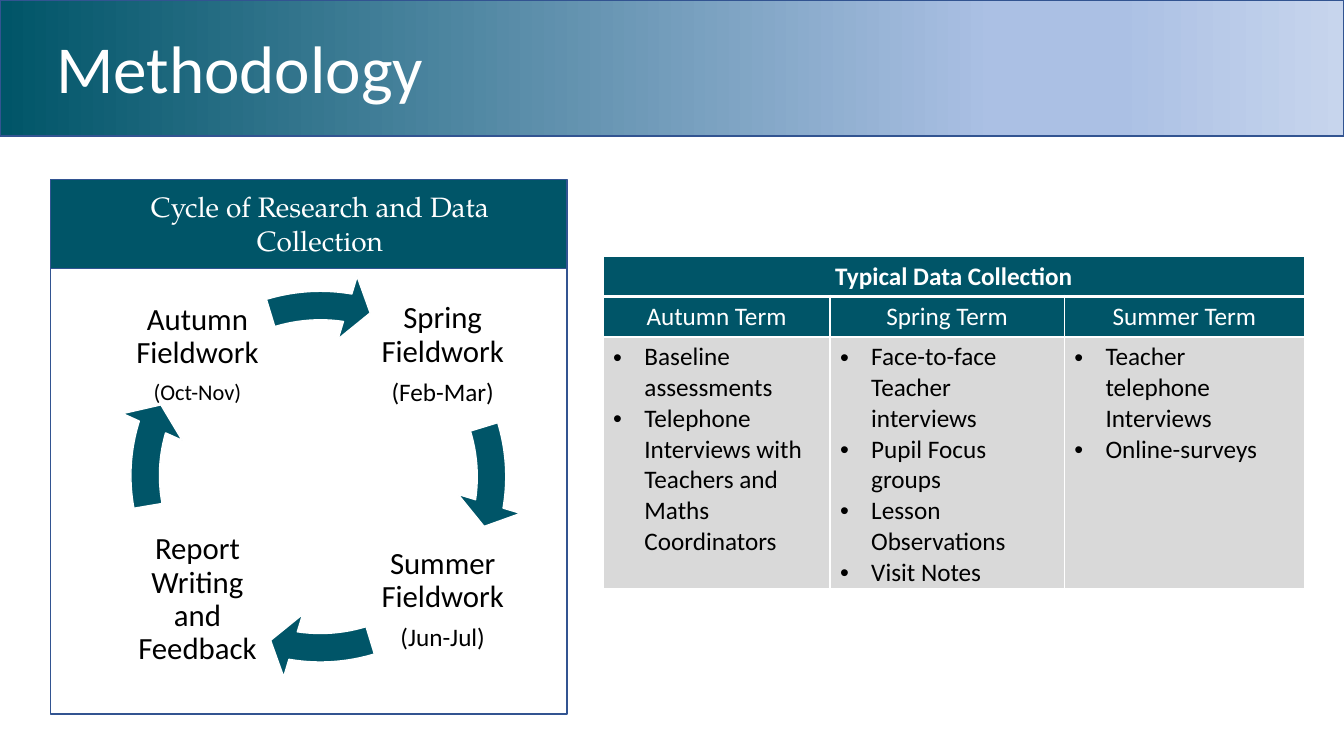
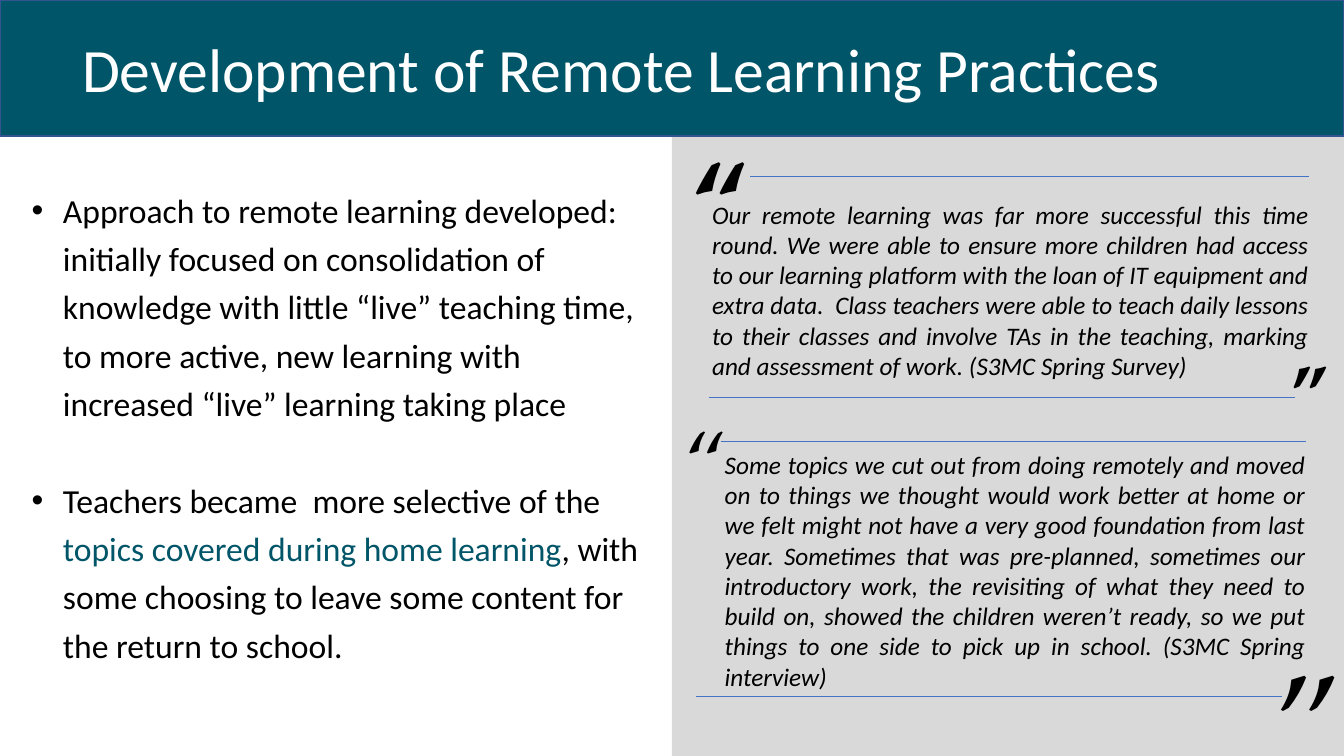
from lxml.etree import SubElement
from pptx import Presentation
from pptx.dml.color import RGBColor
from pptx.enum.shapes import MSO_CONNECTOR, MSO_SHAPE
from pptx.enum.text import MSO_ANCHOR, PP_ALIGN
from pptx.oxml.ns import qn
from pptx.util import Inches, Pt

COLS, ROWS = 160, 90
HEX = {
    "teal": "005568", "edge": "325491", "rule": "4472C4", "gray": "D9D9D9",
    "sky": "ABC0E4", "pale": "C7D5ED", "white": "FFFFFF", "black": "000000",
}
SANS, SERIF = "Calibri", "TeX Gyre Pagella"
LEFT, MID, JUST = PP_ALIGN.LEFT, PP_ALIGN.CENTER, PP_ALIGN.JUSTIFY
TOP, CENTER, BOTTOM = MSO_ANCHOR.TOP, MSO_ANCHOR.MIDDLE, MSO_ANCHOR.BOTTOM


def unit(count):
    """Length of a number of grid cells, each a twelfth of an inch."""
    return Inches(count / 12)


def color(name):
    return RGBColor.from_string(HEX[name])


class Deck:
    def __init__(self):
        self.show = Presentation()
        self.show.slide_width = unit(COLS)
        self.show.slide_height = unit(ROWS)

    def page(self):
        self.slide = self.show.slides.add_slide(self.show.slide_layouts[6])

    def shape(self, box, fill=None, line=None, kind=MSO_SHAPE.RECTANGLE):
        shape = self.slide.shapes.add_shape(kind, *map(unit, box))
        shape.shadow.inherit = False
        if fill:
            shape.fill.solid()
            shape.fill.fore_color.rgb = color(fill)
        else:
            shape.fill.background()
        if line:
            shape.line.color.rgb = color(line)
            shape.line.width = Pt(1)
        else:
            shape.line.fill.background()
        return shape

    def band(self, stops=None):
        """Title band, plain teal or a left-to-right gradient of (percent, color)."""
        band = self.shape((0, 0, COLS, 16.2), "teal", "edge")
        if stops:
            band.fill.gradient()
            band.fill.gradient_angle = 0
            ramp = band._element.spPr.find(qn("a:gradFill")).find(qn("a:gsLst"))
            for old in list(ramp):
                ramp.remove(old)
            for place, name in stops:
                stop = SubElement(ramp, qn("a:gs"), pos=str(place * 1000))
                SubElement(stop, qn("a:srgbClr"), val=HEX[name])

    def style(self, para, size, ink="black", face=SANS, bold=False,
              slant=False, align=LEFT, lead=1.0, after=0):
        font = para.font
        font.size, font.name = Pt(size), face
        font.bold, font.italic = bold, slant
        font.color.rgb = color(ink)
        para.alignment, para.line_spacing = align, lead
        para.space_after = Pt(after)

    def bullet(self, para):
        """Add a hanging bullet to a paragraph that is already styled."""
        props = para._p.get_or_add_pPr()
        props.set("marL", str(Inches(0.31)))
        props.set("indent", str(-Inches(0.31)))
        font = props.find(qn("a:defRPr"))
        for tag, attr in (("a:buFont", {"typeface": "Arial"}),
                          ("a:buChar", {"char": "•"})):
            font.addprevious(SubElement(props, qn(tag), attr))

    def text(self, box, lines, size, anchor=TOP, pad=None, **look):
        """Lines are strings or (string, size) pairs; returns the paragraphs."""
        frame = self.slide.shapes.add_textbox(*map(unit, box)).text_frame
        frame.word_wrap, frame.vertical_anchor = True, anchor
        if pad is not None:
            frame.margin_left = frame.margin_right = unit(pad)
            frame.margin_top = frame.margin_bottom = unit(pad)
        for i, line in enumerate(lines):
            words, height = (line, size) if isinstance(line, str) else line
            para = frame.add_paragraph() if i else frame.paragraphs[0]
            para.text = words
            self.style(para, height, **look)
        return frame.paragraphs

    def title(self, box, words, size, anchor):
        self.text(box, [words], size, anchor, ink="white", lead=0.9)

    def rule(self, left, right, row):
        ends = map(unit, (left, row, right, row))
        rule = self.slide.shapes.add_connector(MSO_CONNECTOR.STRAIGHT, *ends)
        rule.line.color.rgb = color("rule")
        rule.line.width = Pt(0.5)
        SubElement(rule._element.spPr, qn("a:effectLst"))

    def cell(self, cell, lines, fill, top=1, base=1, dots=False, **look):
        """Fill one table cell; top and base are border widths in points."""
        props = cell._tc.get_or_add_tcPr()
        for side, width in (("L", 1), ("R", 1), ("T", top), ("B", base)):
            edge = SubElement(props, qn("a:ln" + side), w=str(Pt(width)))
            paint = SubElement(edge, qn("a:solidFill"))
            SubElement(paint, qn("a:srgbClr"), val=HEX["white"])
        cell.fill.solid()
        cell.fill.fore_color.rgb = color(fill)
        if dots:
            cell.margin_bottom = 0
        frame = cell.text_frame
        for i, line in enumerate(lines):
            para = frame.add_paragraph() if i else frame.paragraphs[0]
            para.text = line
            self.style(para, 18, **look)
            if dots:
                self.bullet(para)

    def table(self, left, top, widths, heights, head, terms, lists):
        frame = self.slide.shapes.add_table(
            len(heights), len(widths), unit(left), unit(top),
            unit(sum(widths)), unit(sum(heights)))
        table = frame.table
        for col, width in zip(table.columns, widths):
            col.width = unit(width)
        for row, height in zip(table.rows, heights):
            row.height = unit(height)
        table.cell(0, 0).merge(table.cell(0, len(widths) - 1))
        for i, (term, items) in enumerate(zip(terms, lists)):
            self.cell(table.cell(0, i), [] if i else [head], "teal", base=3,
                      ink="white", bold=True, align=MID)
            self.cell(table.cell(1, i), [term], "teal", top=3,
                      ink="white", align=MID)
            self.cell(table.cell(2, i), items, "gray", dots=True)


def method(deck):
    deck.page()
    deck.shape((6, 22, 61.5, 63), line="edge")
    deck.shape((6, 21.4, 61.5, 10.6), "teal", "edge")
    deck.band([(0, "teal"), (74, "sky"), (83, "sky"), (100, "pale")])
    deck.title((5.5, 0, 60, 13.4), "Methodology", 48, BOTTOM)

    # Clockwise from the top right; each arrow leads on to the next step.
    steps = [
        (1, 0, ["Spring Fieldwork", ("(Feb-Mar)", 18)]),
        (1, 1, ["Summer Fieldwork", ("(Jun-Jul)", 18)]),
        (0, 1, ["Report Writing and Feedback"]),
        (0, 0, ["Autumn Fieldwork", ("(Oct-Nov)", 16)]),
    ]
    for i, (col, row, lines) in enumerate(steps):
        deck.text((14.9 + 29.2 * col, 33.6 + 29.2 * row, 17.2, 17.2), lines, 22,
                  CENTER, pad=0.4, align=MID, lead=0.9, after=7.7)
        wide = i == 2
        box = (13.4, 32.5, 49.5, 48.5) if wide else (13.9, 32.5, 48.5, 48.5)
        arrow = deck.shape(box, "teal", "white", MSO_SHAPE.CIRCULAR_ARROW)
        arrow.rotation = 7.3 if wide else 0
        turn = 54 * i
        sweep = (0.07, 4.65, 5.5 + turn, (205.85 + turn) % 216, 0.08)
        for j, value in enumerate(sweep):
            arrow.adjustments[j] = value

    deck.text((14.8, 22, 46.6, 9.2), ["Cycle of Research and Data Collection"],
              20, ink="white", face=SERIF, align=MID)
    deck.table(
        71.8, 30.5, (27, 27.9, 28.6), (4.7, 4.7, 30),
        "Typical Data Collection",
        ("Autumn Term", "Spring Term", "Summer Term"),
        (
            ["Baseline assessments",
             "Telephone Interviews with Teachers and Maths Coordinators"],
            ["Face-to-face Teacher interviews", "Pupil Focus groups",
             "Lesson Observations", "Visit Notes"],
            ["Teacher telephone Interviews", "Online-surveys"],
        ))


def remote(deck):
    deck.page()
    deck.shape((80, 14.6, 80, 75.4), "gray")
    deck.band()
    deck.title((8.6, 0, 138, 17.3), "Development of Remote Learning Practices",
               44, CENTER)

    points = deck.text((2.6, 21, 75.8, 64), [
        "Approach to remote learning developed: initially focused on "
        "consolidation of knowledge with little “live” teaching time, to more "
        "active, new learning with increased “live” learning taking place",
        "Teachers became  more selective of the",
    ], 24, lead=1.2)
    for point in points:
        deck.bullet(point)
    points[1].space_before = Pt(34.5)
    topic = points[1].add_run()
    topic.text = " topics covered during home learning"
    topic.font.color.rgb = color("teal")
    points[1].add_run().text = (
        ", with some choosing to leave some content for the return to school.")

    quotes = [
        ((83.6, 23.1, 73.4, 23),
         "Our remote learning was far more successful this time round. We were "
         "able to ensure more children had access to our learning platform "
         "with the loan of IT equipment and extra data.  Class teachers were "
         "able to teach daily lessons to their classes and involve TAs in the "
         "teaching, marking and assessment of work. (S3MC Spring Survey)"),
        ((85.1, 52.9, 71.5, 30.2),
         "Some topics we cut out from doing remotely and moved on to things we "
         "thought would work better at home or we felt might not have a very "
         "good foundation from last year. Sometimes that was pre-planned, "
         "sometimes our introductory work, the revisiting of what they need to "
         "build on, showed the children weren’t ready, so we put things to one "
         "side to pick up in school. (S3MC Spring interview)"),
    ]
    for box, words in quotes:
        deck.text(box, [words], 18, slant=True, align=JUST)

    marks = [("“", 81.3, 14.7, 80, True), ("”", 152.6, 40.4, 54, True),
             ("“", 80.4, 47.9, 60, False), ("”", 150.6, 75.2, 96, False)]
    for mark, left, top, size, bold in marks:
        deck.text((left, top, 7.4, 13), [mark], size, face=SERIF, bold=bold)

    for ends in ((89.3, 155.8, 21), (82.9, 152.6, 82.9),
                 (84.4, 154.2, 47.3), (85.8, 155.5, 52.6)):
        deck.rule(*ends)


def main():
    deck = Deck()
    method(deck)
    remote(deck)
    deck.show.save("out.pptx")


if __name__ == "__main__":
    main()
